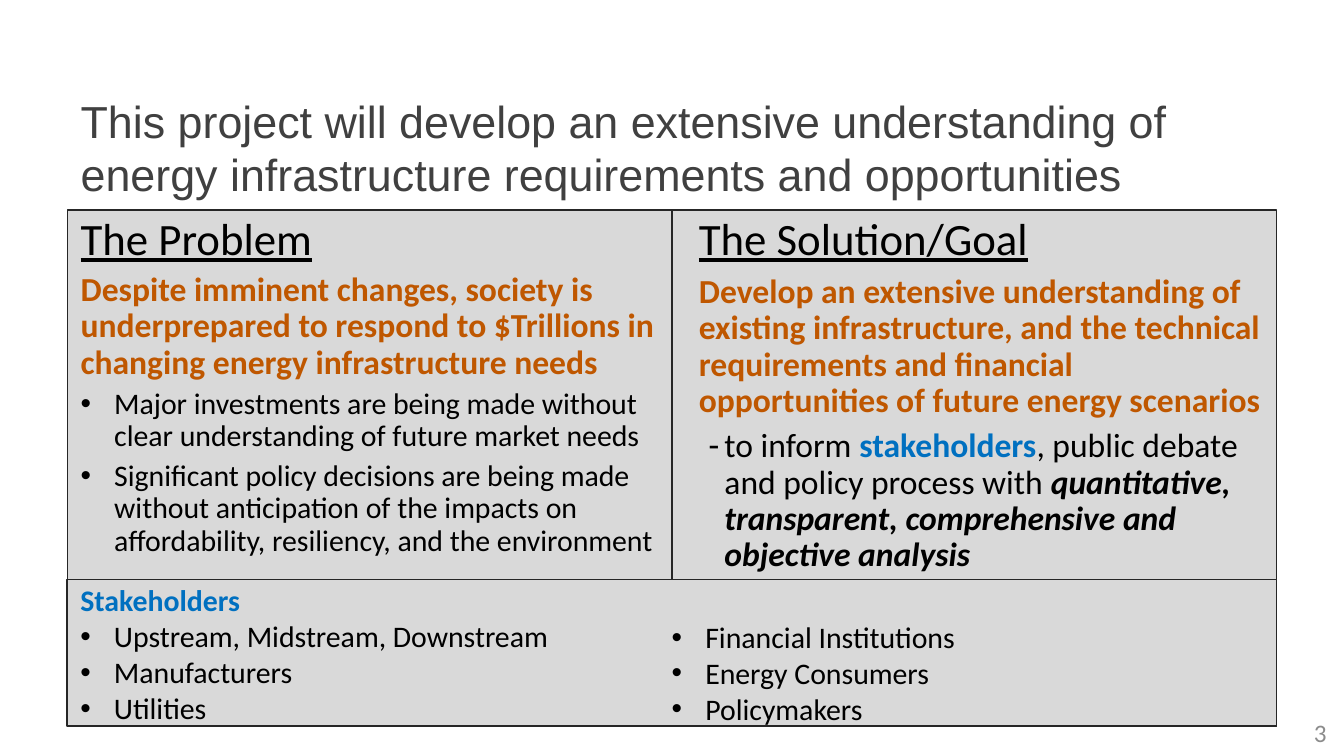
"""Build the slide on the energy project's problem, goal and stakeholders."""
from lxml import etree
from pptx import Presentation
from pptx.dml.color import RGBColor
from pptx.enum.shapes import MSO_SHAPE
from pptx.enum.text import MSO_ANCHOR, MSO_AUTO_SIZE, PP_ALIGN
from pptx.oxml.ns import qn
from pptx.util import Inches, Pt

RECT = MSO_SHAPE.RECTANGLE
TOP, MIDDLE = MSO_ANCHOR.TOP, MSO_ANCHOR.MIDDLE
LEFT, RIGHT = PP_ALIGN.LEFT, PP_ALIGN.RIGHT
NO_FIT = MSO_AUTO_SIZE.NONE

COLORS = {"title": "404040", "panel": "D9D9D9", "edge": "262626", "text": "000000",
          "orange": "BF5700", "blue": "0070C0", "number": "8C8C8C"}

W = 10
H = W * 9 / 16
MARGIN = W / 20
COL = (W - 2 * MARGIN) / 2
TITLE_Y, TITLE_H = H / 9, H / 6
PANEL_Y, PANEL_H = TITLE_Y + TITLE_H, 3.84
STAKE_H = 1.09
STAKE_Y = PANEL_Y + PANEL_H - STAKE_H
LINE_H = 0.27


def place(sp, x, y, w, h, anchor=TOP, inset=0.1):
    sp.left, sp.top, sp.width, sp.height = (Inches(v) for v in (x, y, w, h))
    tf = sp.text_frame
    tf.word_wrap, tf.auto_size, tf.vertical_anchor = True, NO_FIT, anchor
    tf.margin_left, tf.margin_right = Inches(inset), Inches(0.1)
    tf.margin_top = tf.margin_bottom = Inches(0.05)
    return tf


def add_par(tf, runs, size, before=0, bullet=None, indent=(0, 0), spacing=0.9,
            align=LEFT, font="Calibri"):
    first = not tf.paragraphs[0].runs
    p = tf.paragraphs[0] if first else tf.add_paragraph()
    pPr = p._p.get_or_add_pPr()
    pPr.set("marL", str(Inches(indent[0])))
    pPr.set("indent", str(Inches(indent[1])))
    if bullet:
        etree.SubElement(pPr, qn("a:buFont")).set("typeface", "Arial")
        etree.SubElement(pPr, qn("a:buChar")).set("char", bullet)
    else:
        etree.SubElement(pPr, qn("a:buNone"))
    p.alignment, p.line_spacing = align, spacing
    p.space_before, p.space_after = Pt(0 if first else before), Pt(0)
    for text, color, style in runs:
        r = p.add_run()
        r.text = text
        r.font.name, r.font.size = font, Pt(size)
        r.font.color.rgb = RGBColor.from_string(COLORS[color])
        r.font.bold, r.font.italic = "b" in style, "i" in style
        r.font.underline = "u" in style


prs = Presentation()
prs.slide_width, prs.slide_height = Inches(W), Inches(H)
s = prs.slides.add_slide(prs.slide_layouts[3])
title, problem, goal = s.placeholders

tf = place(title, MARGIN, TITLE_Y, 2 * COL, TITLE_H, MIDDLE)
add_par(tf, [("This project will develop an extensive understanding of energy "
              "infrastructure requirements and opportunities", "title", "")],
        24, spacing=1, font="Arial")

problem_tf = place(problem, MARGIN, PANEL_Y, COL, PANEL_H)
goal_tf = place(goal, MARGIN + COL, PANEL_Y, COL, PANEL_H, inset=0.2)
stakeholders = s.shapes.add_shape(RECT, 0, 0, 0, 0)
stakeholders.shadow.inherit = False
stake_tf = place(stakeholders, MARGIN, STAKE_Y, 2 * COL, STAKE_H)

for sp in (problem, goal, stakeholders):
    sp.fill.solid()
    sp.fill.fore_color.rgb = RGBColor.from_string(COLORS["panel"])
    sp.line.color.rgb = RGBColor.from_string(COLORS["edge"])
    sp.line.width = Pt(0.75)

add_par(problem_tf, [("The Problem", "text", "u")], 24)
add_par(problem_tf, [("Despite imminent changes, society is underprepared to respond to "
                      "$Trillions in changing energy infrastructure needs", "orange", "b")],
        18, before=4)
for text in ("Major investments are being made without clear understanding of future "
             "market needs",
             "Significant policy decisions are being made without anticipation of the "
             "impacts on affordability, resiliency, and the environment"):
    add_par(problem_tf, [(text, "text", "")], 16, 4, "•", (0.25, -0.25))

add_par(goal_tf, [("The Solution/Goal", "text", "u")], 24)
add_par(goal_tf, [("Develop an extensive understanding of existing infrastructure, and the "
                   "technical requirements and financial opportunities of future energy "
                   "scenarios", "orange", "b")], 18, before=5)
add_par(goal_tf, [("to inform ", "text", ""),
                  ("stakeholders", "blue", "b"),
                  (", public debate and policy process with ", "text", ""),
                  ("quantitative, transparent, comprehensive and objective analysis",
                   "text", "bi")], 18, 5, "-", (0.19, -0.12))

add_par(stake_tf, [("Stakeholders", "blue", "b")], 16)
second_tf = place(s.shapes.add_textbox(0, 0, 0, 0), MARGIN + COL - 0.1, STAKE_Y + LINE_H,
                  COL, STAKE_H - LINE_H)
for tf, names in (
        (stake_tf, ("Upstream, Midstream, Downstream", "Manufacturers", "Utilities")),
        (second_tf, ("Financial Institutions", "Energy Consumers", "Policymakers"))):
    for name in names:
        add_par(tf, [(name, "text", "")], 16, 2, "•", (0.25, -0.25))

tf = place(s.shapes.add_textbox(0, 0, 0, 0), 7.64, 5.3, 2.33, 0.3, MIDDLE)
add_par(tf, [("3", "number", "")], 13.5, spacing=1, align=RIGHT)

prs.save("out.pptx")
